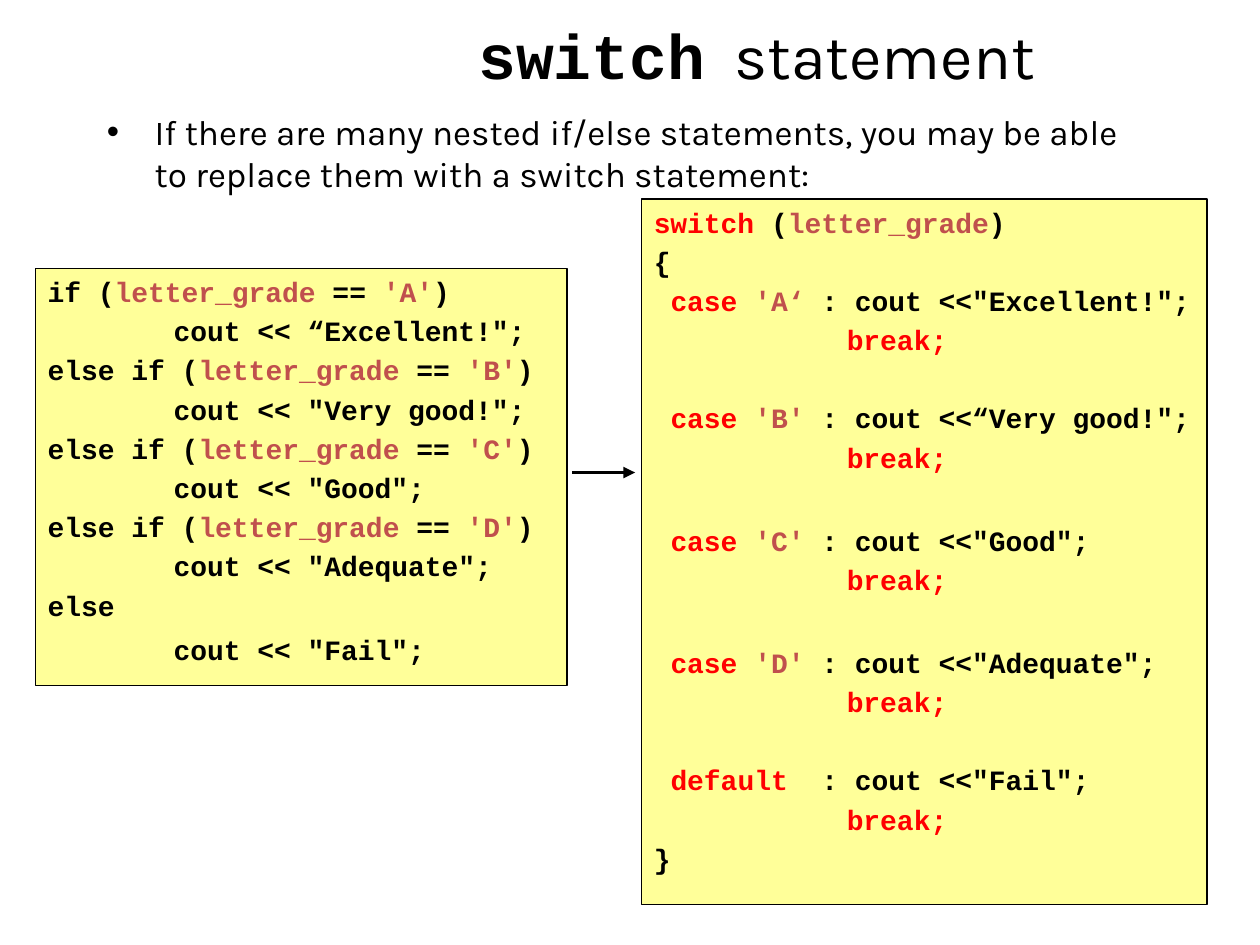
import pptx
import pptx.util
import pptx.dml.color
import pptx.enum.shapes
import pptx.enum.text
from pptx.oxml.ns import qn
from pptx.util import Inches, Pt

BLACK = pptx.dml.color.RGBColor(0x00, 0x00, 0x00)
WHITE = pptx.dml.color.RGBColor(0xFF, 0xFF, 0xFF)
RED = pptx.dml.color.RGBColor(0xFF, 0x00, 0x00)
BRICK = pptx.dml.color.RGBColor(0xC0, 0x50, 0x4D)
YELLOW = pptx.dml.color.RGBColor(0xFF, 0xFF, 0x99)
CODE_FONT = "Courier New"
TEXT_FONT = "Karla"
LINE_GAP = 3.2

CONDITIONS = [
    ("if", "'A'", "“Excellent!\""),
    ("else if", "'B'", "\"Very good!\""),
    ("else if", "'C'", "\"Good\""),
    ("else if", "'D'", "\"Adequate\""),
]
# Label, value, message and the gap in points above the case
CASES = [
    ("case ", "'A‘", "\"Excellent!\"", LINE_GAP),
    ("case ", "'B'", "“Very good!\"", 25.5),
    ("case ", "'C'", "\"Good\"", 28.3),
    ("case ", "'D'", "\"Adequate\"", 28.3),
    ("default", " ", "\"Fail\"", 25.5),
]


def add_element(parent, tag, **attributes):
    element = parent.makeelement(qn(tag), attributes)
    parent.append(element)
    return element


def add_run(paragraph, text, color):
    run = paragraph.add_run()
    run.text = text
    run.font.color.rgb = color
    return run


def add_box(slide, left, top, width, height, fill, wrap):
    box = slide.shapes.add_shape(
        pptx.enum.shapes.MSO_SHAPE.RECTANGLE, left, top, width, height)
    box.shadow.inherit = False
    box.fill.solid()
    box.fill.fore_color.rgb = fill
    box.line.fill.background()
    box.text_frame.word_wrap = wrap
    box.text_frame.vertical_anchor = pptx.enum.text.MSO_ANCHOR.TOP
    return box


def add_title(slide, left, top, width, height):
    box = add_box(slide, left, top, width, height, WHITE, True)
    paragraph = box.text_frame.paragraphs[0]
    paragraph.alignment = pptx.enum.text.PP_ALIGN.CENTER
    paragraph.font.size = Pt(36)
    keyword = add_run(paragraph, "switch", BLACK)
    keyword.font.name = CODE_FONT
    keyword.font.bold = True
    space = add_run(paragraph, " ", BLACK)
    space.font.name = CODE_FONT
    space.font.size = Pt(28)
    add_run(paragraph, "statement", BLACK).font.name = TEXT_FONT


def add_bullet(slide, left, top, width, height, text):
    box = add_box(slide, left, top, width, height, WHITE, True)
    paragraph = box.text_frame.paragraphs[0]
    paragraph.alignment = pptx.enum.text.PP_ALIGN.LEFT
    properties = paragraph._p.get_or_add_pPr()
    properties.set("marL", str(Inches(0.38)))
    properties.set("indent", str(-Inches(0.38)))
    add_element(properties, "a:buFont", typeface="Arial")
    add_element(properties, "a:buChar", char="•")
    paragraph.font.size = Pt(20)
    paragraph.font.name = TEXT_FONT
    add_run(paragraph, text, BLACK)


def add_code_box(slide, left, top, width, height, lines):
    """Each line is a gap in points and a list of (text, color) runs."""
    box = add_box(slide, left, top, width, height, YELLOW, False)
    box.line.color.rgb = BLACK
    box.line.width = Pt(0.75)
    frame = box.text_frame
    for index, (gap, runs) in enumerate(lines):
        paragraph = frame.add_paragraph() if index else frame.paragraphs[0]
        paragraph.alignment = pptx.enum.text.PP_ALIGN.LEFT
        paragraph.space_before = Pt(gap if index else 0)
        tabs = add_element(paragraph._p.get_or_add_pPr(), "a:tabLst")
        add_element(tabs, "a:tab", pos=str(Inches(1)), algn="l")
        paragraph.font.name = CODE_FONT
        paragraph.font.size = Pt(16)
        paragraph.font.bold = True
        for text, color in runs:
            add_run(paragraph, text, color)


def if_else_lines():
    lines = []
    for keyword, grade, message in CONDITIONS:
        lines.append((LINE_GAP, [(f"{keyword} (", BLACK), ("letter_grade", BRICK),
                                 (" == ", BLACK), (grade, BRICK), (")", BLACK)]))
        lines.append((LINE_GAP, [(f"\tcout << {message};", BLACK)]))
    lines.append((LINE_GAP, [("else", BLACK)]))
    lines.append((6, [("\tcout << \"Fail\";", BLACK)]))
    return lines


def switch_lines():
    lines = [
        (LINE_GAP, [("switch", RED), (" (", BLACK), ("letter_grade", BRICK), (")", BLACK)]),
        (LINE_GAP, [("{", BLACK)]),
    ]
    for label, value, message, gap in CASES:
        lines.append((gap, [(" ", BLACK), (label, RED), (value, BRICK),
                            (f" : cout <<{message};", BLACK)]))
        lines.append((LINE_GAP, [("\t    ", BLACK), ("break;", RED)]))
    lines.append((LINE_GAP, [("}", BLACK)]))
    return lines


def add_arrow(slide, left, right, y):
    arrow = slide.shapes.add_connector(
        pptx.enum.shapes.MSO_CONNECTOR.STRAIGHT, left, y, right, y)
    arrow.line.color.rgb = BLACK
    arrow.line.width = Pt(2.25)
    add_element(arrow.line._get_or_add_ln(), "a:tailEnd", type="triangle")
    add_element(arrow._element.spPr, "a:effectLst")


def main():
    presentation = pptx.Presentation()
    presentation.slide_width = Inches(10)
    presentation.slide_height = Inches(7.5)
    slide = presentation.slides.add_slide(presentation.slide_layouts[6])
    add_bullet(slide, Inches(0.75), Inches(0.83), Inches(8.5), Inches(0.83),
               "If there are many nested if/else statements, you may be able "
               "to replace them with a switch statement:")
    add_code_box(slide, Inches(0.28), Inches(2.13), Inches(4.22), Inches(3.31),
                 if_else_lines())
    add_arrow(slide, Inches(4.54), Inches(5.04), Inches(3.75))
    add_code_box(slide, Inches(5.09), Inches(1.58), Inches(4.49), Inches(5.6),
                 switch_lines())
    add_title(slide, Inches(2.67), Inches(0.08), Inches(6.67), Inches(0.83))
    presentation.save("out.pptx")


if __name__ == "__main__":
    main()
